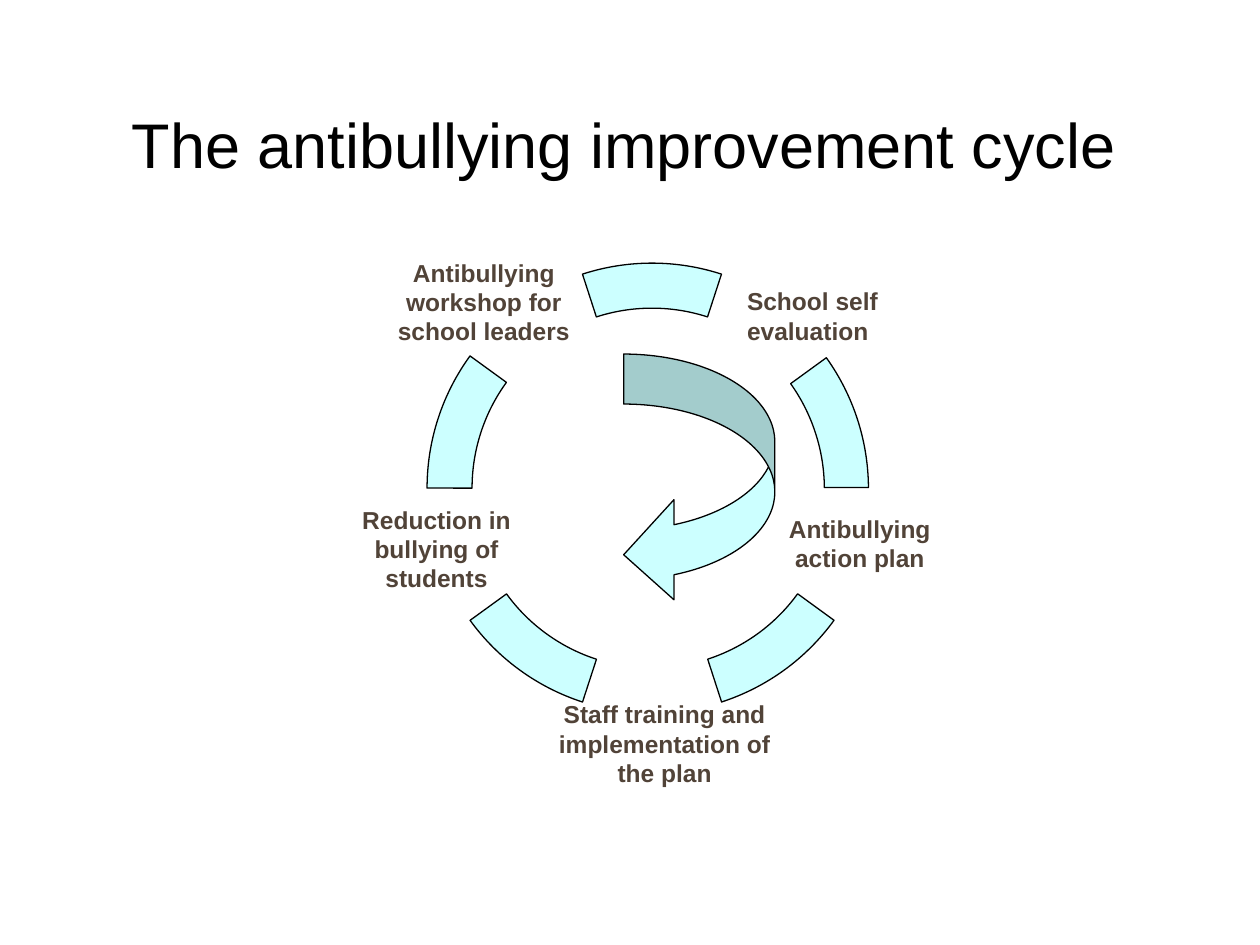
from dataclasses import dataclass, field

from pptx import Presentation
from pptx.dml.color import RGBColor
from pptx.enum.shapes import MSO_SHAPE as Shape
from pptx.enum.text import MSO_ANCHOR as Anchor, MSO_AUTO_SIZE as AutoSize, PP_ALIGN as Align
from pptx.slide import Slide
from pptx.util import Pt

COLORS = {"title": "000000", "label": "514338", "fill": "CCFFFF", "line": "000000"}


def write(frame, text, size=14, color="label", bold=True, align=Align.CENTER):
    frame.word_wrap = True
    frame.auto_size = AutoSize.NONE
    frame.vertical_anchor = Anchor.MIDDLE
    frame.text = text
    paragraph = frame.paragraphs[0]
    paragraph.alignment = align
    font = paragraph.runs[0].font
    font.name, font.size, font.bold = "Arial", Pt(size), bold
    font.color.rgb = RGBColor.from_string(COLORS[color])


@dataclass
class CycleSlide:
    slide: Slide
    colors: dict = field(default_factory=lambda: COLORS)
    line_width: float = 0.75

    def title(self, text, left, top, width, height):
        heading = self.slide.shapes.title
        heading.left, heading.top = Pt(left), Pt(top)
        heading.width, heading.height = Pt(width), Pt(height)
        write(heading.text_frame, text, size=36, color="title", bold=False)

    def label(self, text, left, top, width, height, align=Align.CENTER):
        label = self.slide.shapes.add_textbox(Pt(left), Pt(top), Pt(width), Pt(height))
        frame = label.text_frame
        frame.margin_left = frame.margin_right = Pt(5)
        frame.margin_top = frame.margin_bottom = Pt(3)
        write(frame, text, align=align)

    def shape(self, preset, left, top, width, height, adjustments, rotation=0):
        shape = self.slide.shapes.add_shape(preset, Pt(left), Pt(top), Pt(width), Pt(height))
        for index, value in enumerate(adjustments):
            shape.adjustments[index] = value
        shape.rotation = rotation
        shape.shadow.inherit = False
        shape.fill.solid()
        shape.fill.fore_color.rgb = RGBColor.from_string(self.colors["fill"])
        shape.line.color.rgb = RGBColor.from_string(self.colors["line"])
        shape.line.width = Pt(self.line_width)

    def arc(self, box, rotation, start=252, end=288, thickness=0.1):
        degree = 60000 / 100000
        self.shape(Shape.BLOCK_ARC, *box, (start * degree, end * degree, thickness), rotation)


def main():
    deck = Presentation()
    deck.slide_width, deck.slide_height = Pt(720), Pt(540)
    cycle = CycleSlide(deck.slides.add_slide(deck.slide_layouts[5]))

    cycle.title("The antibullying improvement cycle", 32.4, 36.7, 648, 90)

    ring = (244.1, 150.4, 257, 257)
    shifted_ring = (242.6, 152.6, 255, 252)
    for step in range(5):
        cycle.arc(shifted_ring if step == 1 else ring, rotation=72 * step)

    cycle.label("School self evaluation", 421.9, 160.5, 108, 39.6, align=Align.LEFT)
    cycle.label("Staff training and implementation of the plan", 309.6, 404.6, 140.4, 40.3)
    cycle.label("Antibullying workshop for school leaders", 211, 150.5, 131, 43.9)
    cycle.label("Antibullying action plan", 440.6, 276.5, 101.5, 67.7)
    cycle.label("Reduction in bullying of students", 196.6, 291.6, 105.8, 43.9)

    cycle.shape(Shape.CURVED_LEFT_ARROW, 356.4, 202.3, 86.4, 143.3, (0.331, 0.662, 0.333))

    deck.save("out.pptx")


if __name__ == "__main__":
    main()
